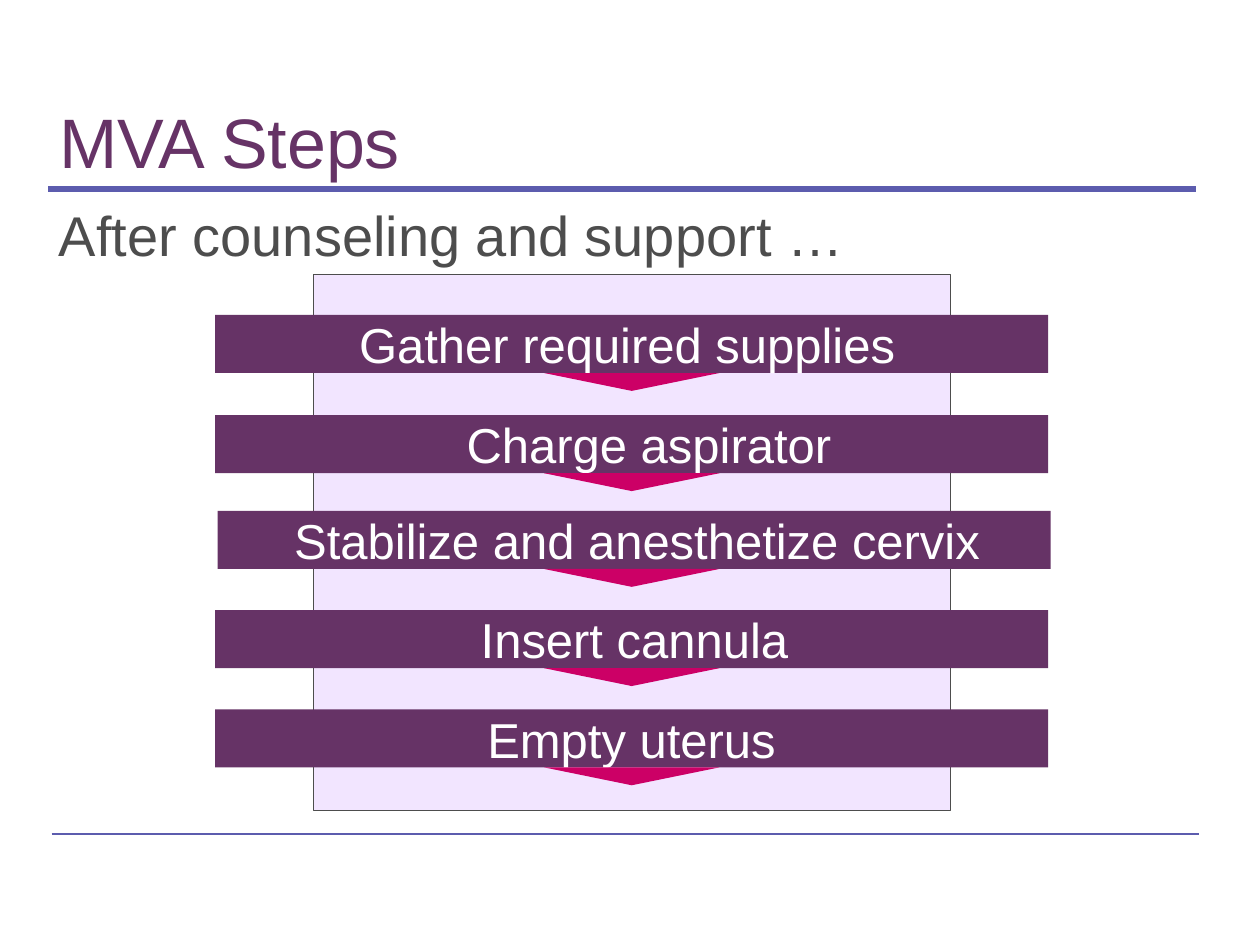
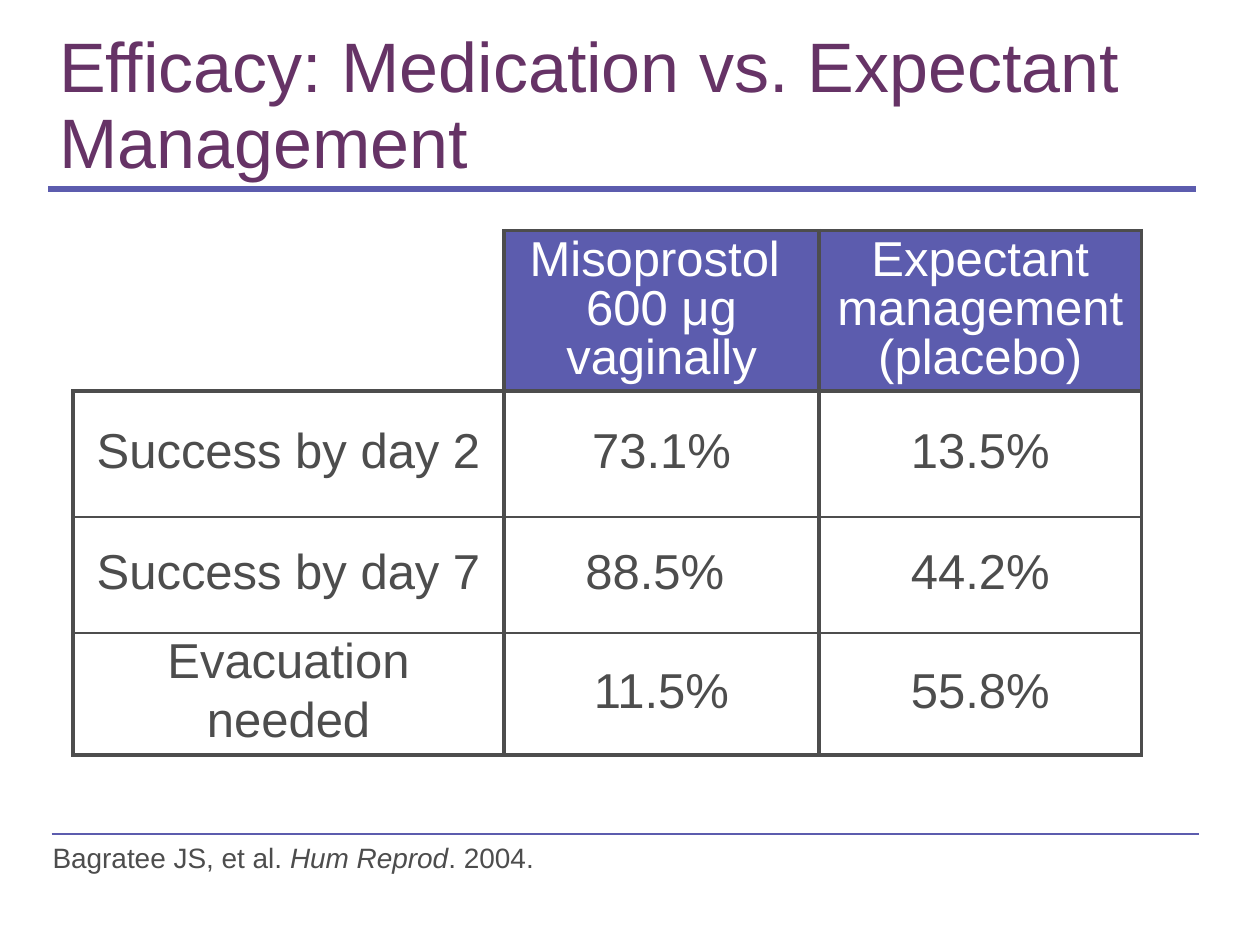
"""Build two slides: the MVA steps and a table of medication efficacy."""
from lxml.etree import SubElement as Sub
from pptx import Presentation
from pptx.dml.color import RGBColor as RGB
from pptx.enum.shapes import MSO_CONNECTOR as Link, MSO_SHAPE as Kind
from pptx.enum.text import MSO_ANCHOR as Anchor, MSO_AUTO_SIZE as Fit, PP_ALIGN as Align
from pptx.oxml.ns import qn
from pptx.util import Cm, Pt

PLUM = RGB(0x66, 0x33, 0x66)
BLUE = RGB(0x5C, 0x5C, 0xAE)
GREY = RGB(0x4D, 0x4D, 0x4D)
LILAC = RGB(0xCC, 0x99, 0xFF)
PINK = RGB(0xCC, 0x00, 0x66)
WHITE = RGB(0xFF, 0xFF, 0xFF)


def write(frame, text, size=28, color=GREY, align=Align.LEFT, space=1.0, wrap=True):
    """Fill a frame: newline starts a paragraph, \\v breaks a line, stars mark italics."""
    frame.word_wrap = wrap
    for row, line in enumerate(text.split("\n")):
        para = frame.add_paragraph() if row else frame.paragraphs[0]
        para.alignment = align
        para.line_spacing = space
        if row:
            para.space_before = Pt(size * 0.2)
        for part, chunk in enumerate(line.split("*")):
            for bit, words in enumerate(chunk.split("\v")):
                if bit:
                    para.add_line_break()
                run = para.add_run()
                run.text = words
                run.font.name = "Arial"
                run.font.size = Pt(size)
                run.font.color.rgb = color
                run.font.italic = part % 2 == 1


def block(slide, kind, left, top, width, height, color):
    """Add a flat shape without an outline."""
    shape = slide.shapes.add_shape(kind, Cm(left), Cm(top), Cm(width), Cm(height))
    shape.shadow.inherit = False
    shape.fill.solid()
    shape.fill.fore_color.rgb = color
    shape.line.fill.background()
    return shape


deck = Presentation()
deck.slide_width, deck.slide_height = Cm(25.4), Cm(19.05)

TITLES = (
    ("MVA Steps", 23.85),
    ("Efficacy: Medication vs. Expectant Management", 24.46),
)
RULES = ((1.04, 16.81, 0.75), (0.97, 3.81, 3))
pages = []
for head, width in TITLES:
    slide = deck.slides.add_slide(deck.slide_layouts[5])
    for left, top, weight in RULES:
        rule = slide.shapes.add_connector(
            Link.STRAIGHT, Cm(left), Cm(top), Cm(left + 23.14), Cm(top))
        rule.line.color.rgb = BLUE
        rule.line.width = Pt(weight)
        Sub(rule._element.spPr, qn("a:effectLst"))
    title = slide.shapes.title
    title.left, title.top, title.width, title.height = Cm(0.94), Cm(0.64), Cm(width), Cm(3.18)
    title.text_frame.auto_size = Fit.NONE
    title.text_frame.vertical_anchor = Anchor.BOTTOM
    write(title.text_frame, head, size=40, color=PLUM, space=0.9)
    pages.append(slide)
steps, results = pages

panel = block(steps, Kind.RECTANGLE, 6.32, 5.54, 12.85, 10.8, LILAC)
tint = panel._element.spPr.find(".//" + qn("a:srgbClr"))
Sub(tint, qn("a:alpha"), val="25000")
panel.line.color.rgb = GREY
panel.line.width = Pt(0.75)

STEPS = (
    ("Gather required supplies", 4.34, 6.35, 12.64),
    ("Charge aspirator", 4.34, 8.37, 13.08),
    ("Stabilize and anesthetize cervix", 4.39, 10.3, 12.84),
    ("Insert cannula", 4.34, 12.3, 12.79),
    ("Empty uterus", 4.34, 14.3, 12.73),
)
BAR, SPAN = 1.17, 15
for step, left, top, mid in STEPS:
    block(steps, Kind.RECTANGLE, left, top, 16.79, BAR, PLUM)
    label = steps.shapes.add_textbox(
        Cm(mid - SPAN / 2), Cm(top - 0.13), Cm(SPAN), Cm(1.45))
    write(label.text_frame, step, color=WHITE, align=Align.CENTER)
    tip = block(steps, Kind.ISOSCELES_TRIANGLE, 10.97, top + BAR, 3.53, 0.36, PINK)
    tip.rotation = 180

intro = steps.shapes.add_textbox(Cm(0.94), Cm(3.91), Cm(22.48), Cm(1.6))
write(intro.text_frame, "After counseling and support …", size=32)

DATA = (
    ("", "Misoprostol \v600 μg vaginally", "Expectant management (placebo)"),
    ("Success by day 2", "73.1%", "13.5%"),
    ("Success by day 7", "88.5% ", "44.2%"),
    ("Evacuation\nneeded", "11.5%", "55.8%"),
)
COLS = (8.69, 6.35, 6.5)
ROWS = (3.07, 2.54, 2.34, 2.46)
table = results.shapes.add_table(
    len(ROWS), len(COLS), Cm(1.47), Cm(4.65), Cm(sum(COLS)), Cm(sum(ROWS))).table
table.first_row = table.horz_banding = False
for col, width in zip(table.columns, COLS):
    col.width = Cm(width)
for row, height in zip(table.rows, ROWS):
    row.height = Cm(height)

for r, line in enumerate(DATA):
    for c, text in enumerate(line):
        cell = table.cell(r, c)
        corner = r == c == 0
        edges = {
            "L": 0 if corner else 2.25,
            "R": 2.25,
            "T": 0 if corner else 2.25 if r < 2 else 1,
            "B": 2.25 if r in (0, len(DATA) - 1) else 1,
        }
        for side, weight in edges.items():
            edge = Sub(cell._tc.get_or_add_tcPr(), qn("a:ln" + side), w=str(Pt(weight)))
            if weight:
                Sub(Sub(edge, qn("a:solidFill")), qn("a:srgbClr"), val=str(GREY))
            else:
                Sub(edge, qn("a:noFill"))
        if r == 0 and c:
            cell.fill.solid()
            cell.fill.fore_color.rgb = BLUE
        else:
            cell.fill.background()
        cell.vertical_anchor = Anchor.TOP if "\n" in text else Anchor.MIDDLE
        if text:
            write(cell.text_frame, text, color=GREY if r else WHITE,
                  align=Align.CENTER, space=0.9)

source = results.shapes.add_textbox(Cm(0.81), Cm(16.81), Cm(10.34), Cm(0.94))
write(source.text_frame, "Bagratee JS, et al. *Hum Reprod*. 2004.", size=16, wrap=False)

deck.save("out.pptx")
